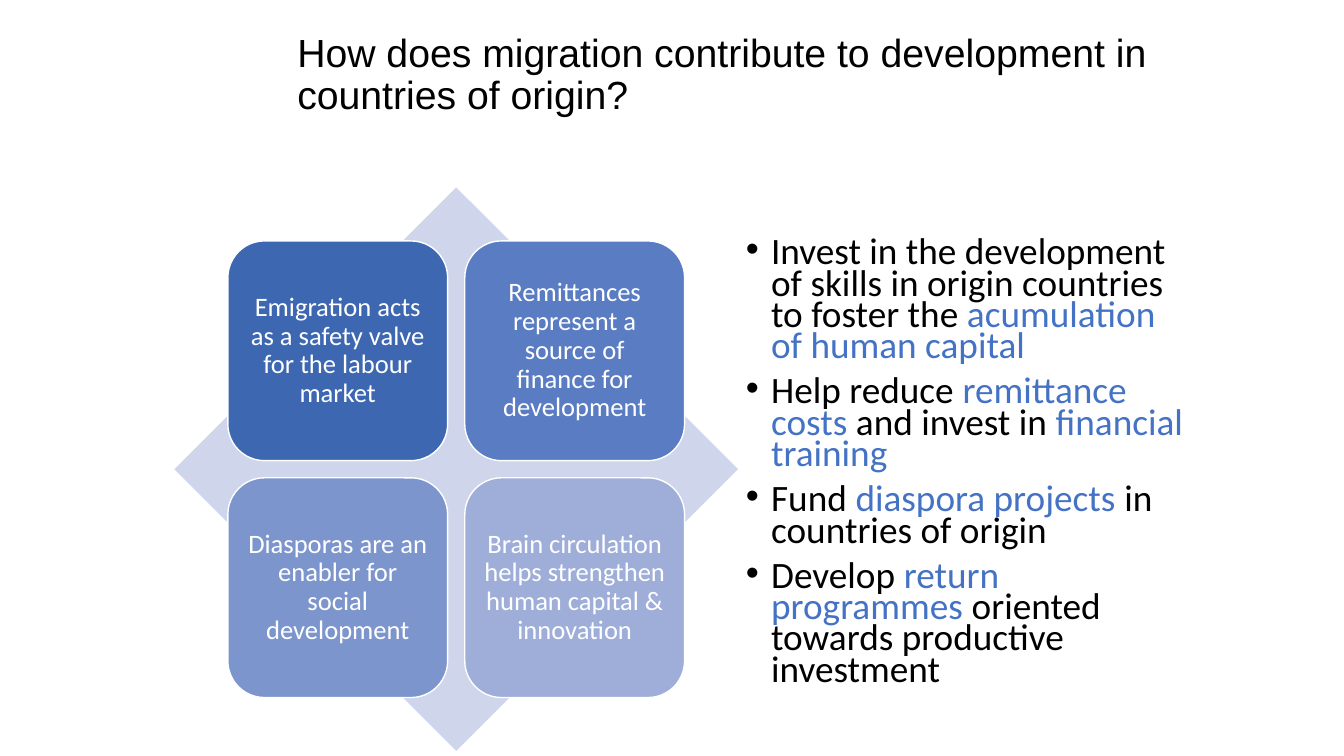
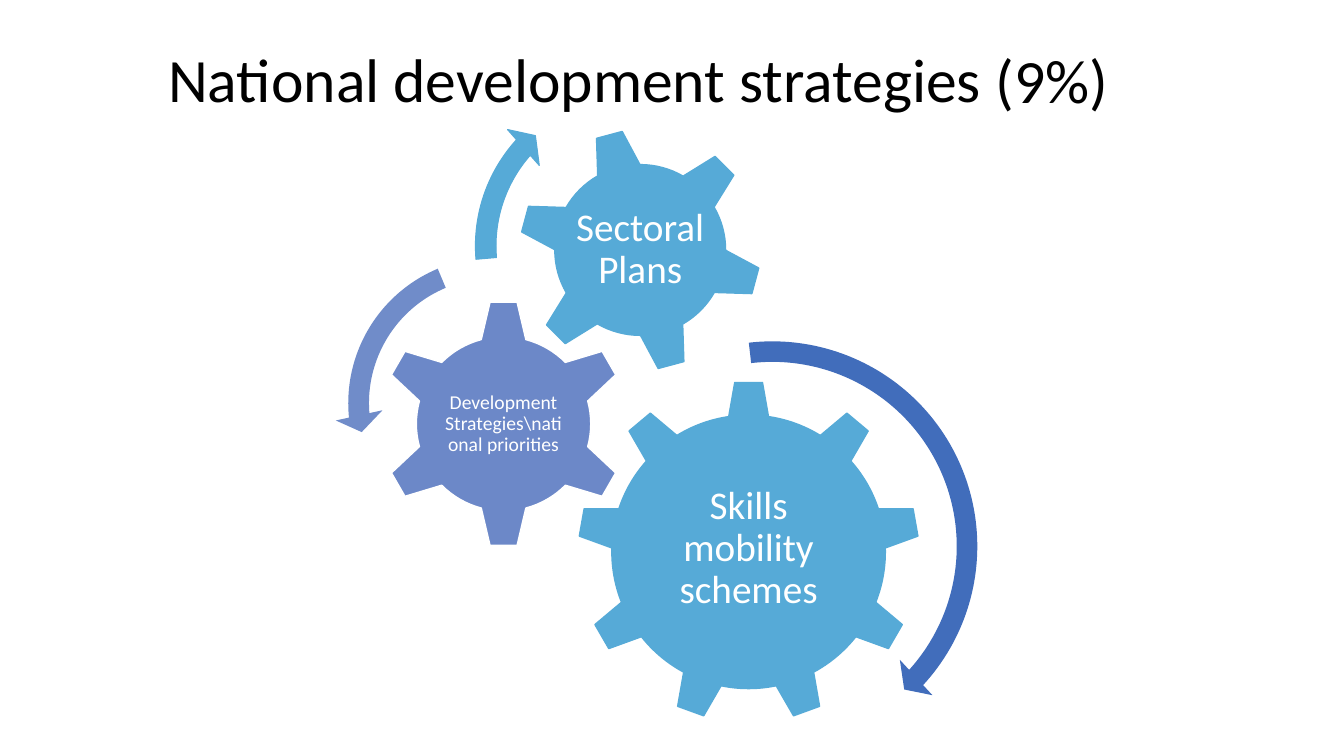
"""Build two slides on migration and development strategies."""
from pptx import Presentation
from pptx.dml.color import RGBColor
from pptx.enum.shapes import MSO_SHAPE as Preset
from pptx.enum.text import MSO_ANCHOR as Anchor, PP_ALIGN as Align
from pptx.util import Inches, Pt
from lxml import etree

BLACK = RGBColor(0x00, 0x00, 0x00)
WHITE = RGBColor(0xFF, 0xFF, 0xFF)
ACCENT = RGBColor(0x44, 0x72, 0xC4)
PALE = RGBColor(0xCF, 0xD5, 0xEA)
SKY = RGBColor(0x56, 0xAA, 0xD7)
PERIWINKLE = RGBColor(0x6C, 0x88, 0xC8)
LIGHT_PERIWINKLE = RGBColor(0x70, 0x8C, 0xC9)
ROYAL = RGBColor(0x41, 0x6D, 0xBB)

TITLES = [
    [("How does migration contribute to development in countries of origin?",
      (2.85, 0.19, 8.82, 1.12), "Arial", 28)],
    [("National development strategies", (1.57, 0.26, 10.81, 1.12), "Calibri", 44),
     ("(9%)", (9.78, 0.27, 1.66, 1.12), "Calibri", 44)],
]

DIAMOND = (1.73, 1.86, 5.59, 5.59)
TILE_SIZE, TILE_PITCH = 2.18, 2.35
TILES = [
    ("Emigration acts as a safety valve for the labour market", RGBColor(0x3E, 0x67, 0xB2)),
    ("Remittances represent a source of finance for development", RGBColor(0x5A, 0x7C, 0xC3)),
    ("Diasporas are an enabler for social development", RGBColor(0x7D, 0x95, 0xCD)),
    ("Brain circulation helps strengthen human capital & innovation", RGBColor(0x9F, 0xAE, 0xD8)),
]

ACTIONS_BOX = (7.3, 2.33, 4.57, 5.17)
ACTIONS = [
    ("Invest in the development of skills in origin countries to foster the ",
     "acumulation of human capital"),
    ("Help reduce ", "remittance costs ", "and invest in ", "financial training"),
    ("Fund ", "diaspora projects ", "in countries of origin"),
    ("Develop ", "return programmes ", "oriented towards productive investment"),
]

GEARS = [
    dict(text="Skills mobility schemes", preset=Preset.GEAR_9, at=(5.73, 3.78, 3.39),
         label=(2.03, 1.74), rise=0.03, size=28, inset=0.04, fill=SKY, line=SKY, turn=0),
    dict(text=r"Development Strategies\national priorities", preset=Preset.GEAR_6,
         at=(3.76, 2.97, 2.47), label=(1.23, 1.22), rise=0, size=14, inset=0.02,
         fill=PERIWINKLE, line=WHITE, turn=0),
    dict(text="Sectoral Plans", preset=Preset.GEAR_6, at=(5.14, 1.27, 2.42),
         label=(1.36, 1.36), rise=0, size=28, inset=0.04, fill=SKY, line=SKY, turn=345),
]

ARROWS = [
    (Preset.CIRCULAR_ARROW, (5.49, 3.25, 4.34), ROYAL, None,
     (0.047, 2.99, 25.425, 158.056, 0.055)),
    (Preset.LEFT_CIRCULAR_ARROW, (3.32, 2.42, 3.16), LIGHT_PERIWINKLE, None,
     (0.065, 4.3, 104.891, 148.378, 0.075)),
    (Preset.CIRCULAR_ARROW, (4.58, 0.74, 3.4), SKY, SKY,
     (0.06, 3.941, 133.138, 105.082, 0.07)),
]


def add_figure(page, preset, at, fill, line=None, width=1):
    figure = page.shapes.add_shape(preset, *map(Inches, at))
    figure.shadow.inherit = False
    figure.fill.solid()
    figure.fill.fore_color.rgb = fill
    if line is None:
        figure.line.fill.background()
    else:
        figure.line.color.rgb = line
        figure.line.width = Pt(width)
    return figure


def add_box(page, at):
    box = page.shapes.add_textbox(*map(Inches, at))
    box.text_frame.word_wrap = True
    return box


def style(para, font, size, color, spacing=0.9, align=Align.LEFT):
    para.font.name, para.font.size = font, Pt(size)
    para.font.color.rgb = color
    para.line_spacing, para.alignment = spacing, align


def write(shape, text, font, size, color, align=Align.CENTER, inset=None):
    frame = shape.text_frame
    frame.word_wrap, frame.vertical_anchor = True, Anchor.MIDDLE
    if inset is not None:
        frame.margin_left = frame.margin_right = Inches(inset)
        frame.margin_top = frame.margin_bottom = Inches(inset)
    para = frame.paragraphs[0]
    para.text = text
    style(para, font, size, color, align=align)


def add_bullet(para):
    props = para._p.get_or_add_pPr()
    props.set("marL", str(Inches(0.25)))
    props.set("indent", str(-Inches(0.25)))
    namespace = props.nsmap["a"]
    bullet_font = etree.Element(f"{{{namespace}}}buFont", typeface="Arial")
    bullet = etree.Element(f"{{{namespace}}}buChar", char="•")
    defaults = props.find(f"{{{namespace}}}defRPr")
    defaults.addprevious(bullet_font)
    defaults.addprevious(bullet)


def add_page(deck, titles):
    page = deck.slides.add_slide(deck.slide_layouts[6])
    for text, at, font, size in titles:
        write(add_box(page, at), text, font, size, BLACK, Align.LEFT)
    return page


def draw_tiles(page):
    add_figure(page, Preset.DIAMOND, DIAMOND, PALE)
    left, top, width, height = DIAMOND
    span = TILE_SIZE + TILE_PITCH
    for index, (text, fill) in enumerate(TILES):
        row, column = divmod(index, 2)
        at = (left + (width - span) / 2 + column * TILE_PITCH,
              top + (height - span) / 2 + row * TILE_PITCH, TILE_SIZE, TILE_SIZE)
        tile = add_figure(page, Preset.ROUNDED_RECTANGLE, at, fill, WHITE)
        write(tile, text, "Calibri", 19, WHITE, inset=0.08)


def draw_actions(page):
    frame = add_box(page, ACTIONS_BOX).text_frame
    for index, parts in enumerate(ACTIONS):
        para = frame.add_paragraph() if index else frame.paragraphs[0]
        style(para, "Calibri", 26.6, BLACK, spacing=0.7)
        para.space_before = Pt(10)
        add_bullet(para)
        for position, part in enumerate(parts):
            span = para.add_run()
            span.text = part
            span.font.size, span.font.name = Pt(26.6), "Calibri"
            span.font.color.rgb = ACCENT if position % 2 else BLACK


def draw_gears(page):
    for gear in GEARS:
        left, top, side = gear["at"]
        figure = add_figure(page, gear["preset"], (left, top, side, side),
                            gear["fill"], gear["line"])
        figure.rotation = gear["turn"]
        width, height = gear["label"]
        label = add_box(page, (left + (side - width) / 2,
                               top + (side - height) / 2 - gear["rise"], width, height))
        write(label, gear["text"], "Calibri", gear["size"], WHITE, inset=gear["inset"])


def draw_arrows(page):
    for preset, (left, top, side), fill, line, adjustments in ARROWS:
        arrow = add_figure(page, preset, (left, top, side, side), fill, line, 0.75)
        for index, value in enumerate(adjustments):
            arrow.adjustments[index] = value


def main():
    deck = Presentation()
    deck.slide_width, deck.slide_height = Inches(13.33), Inches(7.5)
    origin_page, strategy_page = [add_page(deck, titles) for titles in TITLES]
    draw_tiles(origin_page)
    draw_actions(origin_page)
    draw_gears(strategy_page)
    draw_arrows(strategy_page)
    deck.save("out.pptx")


if __name__ == "__main__":
    main()
